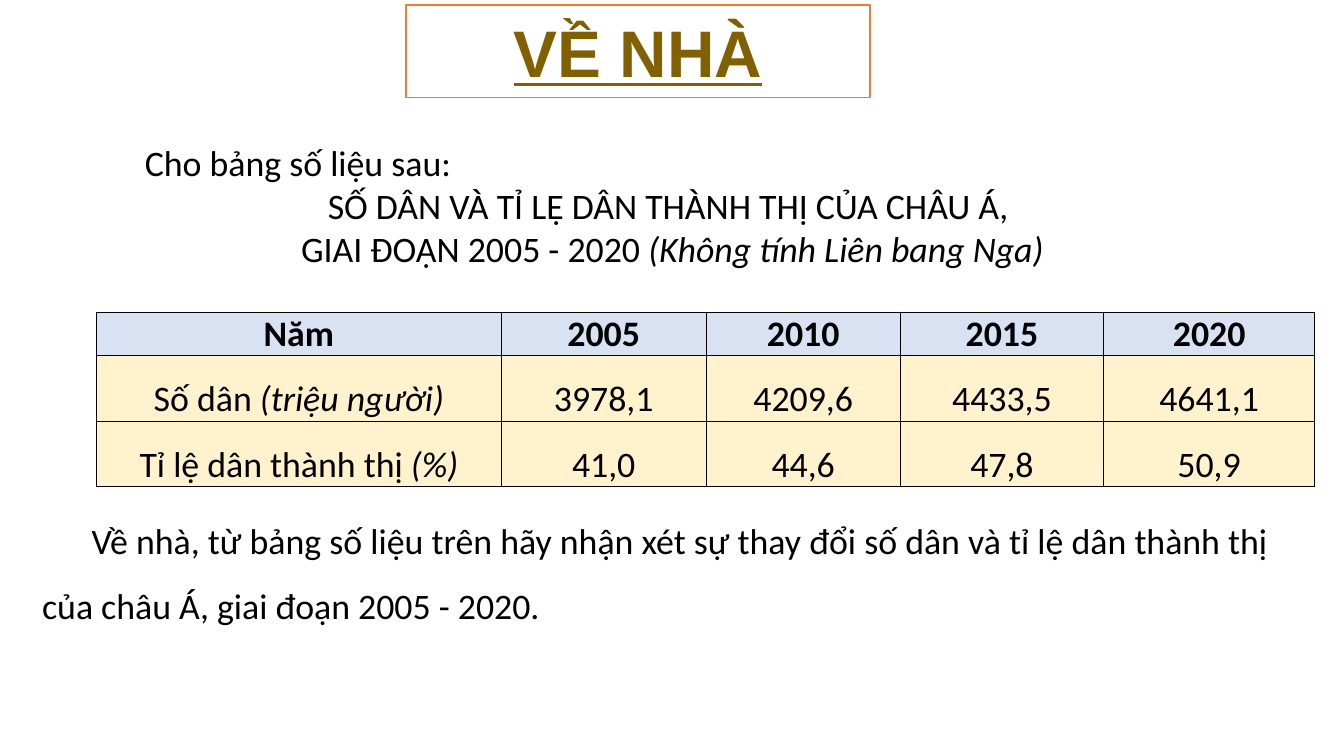
from dataclasses import dataclass

from lxml.etree import SubElement
from pptx import Presentation
from pptx.dml.color import RGBColor
from pptx.enum.text import MSO_ANCHOR, MSO_AUTO_SIZE, PP_ALIGN
from pptx.oxml.ns import qn
from pptx.util import Pt

TITLE = "VỀ NHÀ"
# Each paragraph is (plain text, italic text, alignment)
INTRO = [
    ("Cho bảng số liệu sau:", "", PP_ALIGN.JUSTIFY),
    ("SỐ DÂN VÀ TỈ LỆ DÂN THÀNH THỊ CỦA CHÂU Á, ", "", PP_ALIGN.CENTER),
    ("GIAI ĐOẠN 2005 - 2020 ", "(Không tính Liên bang Nga)", PP_ALIGN.CENTER),
]
TASK = [
    ("Về nhà, từ bảng số liệu trên hãy nhận xét sự thay đổi số dân và tỉ lệ dân "
     "thành thị của châu Á, giai đoạn 2005 - 2020.", "", PP_ALIGN.JUSTIFY),
]
# Each row is (label, unit, values)
POPULATION = [
    ("Năm", "", ("2005", "2010", "2015", "2020")),
    ("Số dân ", "(triệu người)", ("3978,1", "4209,6", "4433,5", "4641,1")),
    ("Tỉ lệ dân thành thị ", "(%)", ("41,0", "44,6", "47,8", "50,9")),
]
COLUMN_WIDTHS = (289, 146.5, 138.5, 145.5, 150.5)
ROW_HEIGHTS = (31.2, 46.8, 46.8)


@dataclass(frozen=True)
class Theme:
    title_font: str = "Arial"
    body_font: str = "Calibri"
    title_size: float = 47
    body_size: float = 25.6
    paper: str = "FFFFFF"
    ink: str = "000000"
    title_ink: str = "806000"
    title_line: str = "ED7D31"
    header_fill: str = "D9E2F3"
    body_fill: str = "FFF2CC"


THEME = Theme()


def place(shape, left, top, width, height):
    shape.left, shape.top, shape.width, shape.height = map(Pt, (left, top, width, height))


def write(paragraph, plain, italic, alignment, spacing=1.0):
    paragraph.alignment = alignment
    paragraph.line_spacing = spacing
    font = paragraph.font
    font.name, font.size = THEME.body_font, Pt(THEME.body_size)
    font.color.rgb = RGBColor.from_string(THEME.ink)
    paragraph.add_run().text = plain
    if italic:
        run = paragraph.add_run()
        run.text = italic
        run.font.italic = True


def add_title(slide):
    title = slide.shapes.title
    place(title, 290, 3.6, 331.5, 66)
    title.fill.solid()
    title.fill.fore_color.rgb = RGBColor.from_string(THEME.paper)
    title.line.color.rgb = RGBColor.from_string(THEME.title_line)
    title.line.width = Pt(1)
    frame = title.text_frame
    frame.auto_size = MSO_AUTO_SIZE.NONE
    frame.vertical_anchor = MSO_ANCHOR.TOP
    frame.margin_left = frame.margin_right = Pt(9.6)
    frame.margin_top = frame.margin_bottom = Pt(4.8)
    frame.text = TITLE
    paragraph = frame.paragraphs[0]
    paragraph.alignment = PP_ALIGN.CENTER
    paragraph.line_spacing = 1.0
    font = paragraph.font
    font.name, font.size = THEME.title_font, Pt(THEME.title_size)
    font.bold = font.underline = True
    font.color.rgb = RGBColor.from_string(THEME.title_ink)


def add_text(slide, content, box, spacing=1.0):
    frame = slide.shapes.add_textbox(*map(Pt, box)).text_frame
    frame.word_wrap = True
    frame.vertical_anchor = MSO_ANCHOR.MIDDLE
    for index, (plain, italic, alignment) in enumerate(content):
        paragraph = frame.add_paragraph() if index else frame.paragraphs[0]
        write(paragraph, plain, italic, alignment, spacing)
        properties = paragraph._p.get_or_add_pPr()
        properties.set("marL", "0")
        properties.set("indent", str(Pt(35.4)))


def add_borders(cell):
    properties = cell._tc.get_or_add_tcPr()
    for side in ("lnL", "lnR", "lnT", "lnB"):
        line = SubElement(properties, qn(f"a:{side}"), w=str(Pt(1)))
        fill = SubElement(line, qn("a:solidFill"))
        SubElement(fill, qn("a:srgbClr"), val=THEME.ink)


def add_population_table(slide):
    table = slide.shapes.add_table(
        len(POPULATION), len(COLUMN_WIDTHS), Pt(69), Pt(223),
        Pt(sum(COLUMN_WIDTHS)), Pt(sum(ROW_HEIGHTS))).table
    table.first_row = table.horz_banding = False
    for column, width in zip(table.columns, COLUMN_WIDTHS):
        column.width = Pt(width)
    for row_index, (label, unit, values) in enumerate(POPULATION):
        table.rows[row_index].height = Pt(ROW_HEIGHTS[row_index])
        is_header = row_index == 0
        entries = [(label, unit)] + [(value, "") for value in values]
        for column_index, (plain, italic) in enumerate(entries):
            cell = table.cell(row_index, column_index)
            cell.margin_left = cell.margin_right = Pt(5)
            cell.margin_top = cell.margin_bottom = 0
            cell.vertical_anchor = MSO_ANCHOR.MIDDLE if is_header else MSO_ANCHOR.TOP
            add_borders(cell)
            cell.fill.solid()
            cell.fill.fore_color.rgb = RGBColor.from_string(
                THEME.header_fill if is_header else THEME.body_fill)
            paragraph = cell.text_frame.paragraphs[0]
            write(paragraph, plain, italic, PP_ALIGN.CENTER, 1.0 if is_header else 1.5)
            paragraph.space_before = Pt(6)
            paragraph.font.bold = is_header


def main():
    presentation = Presentation()
    presentation.slide_width, presentation.slide_height = Pt(960), Pt(540)
    slide = presentation.slides.add_slide(presentation.slide_layouts[5])
    add_title(slide)
    add_text(slide, INTRO, (61, 96, 803, 101.5))
    add_population_table(slide)
    add_text(slide, TASK, (23, 353.5, 890, 96), spacing=1.5)
    presentation.save("out.pptx")


if __name__ == "__main__":
    main()
